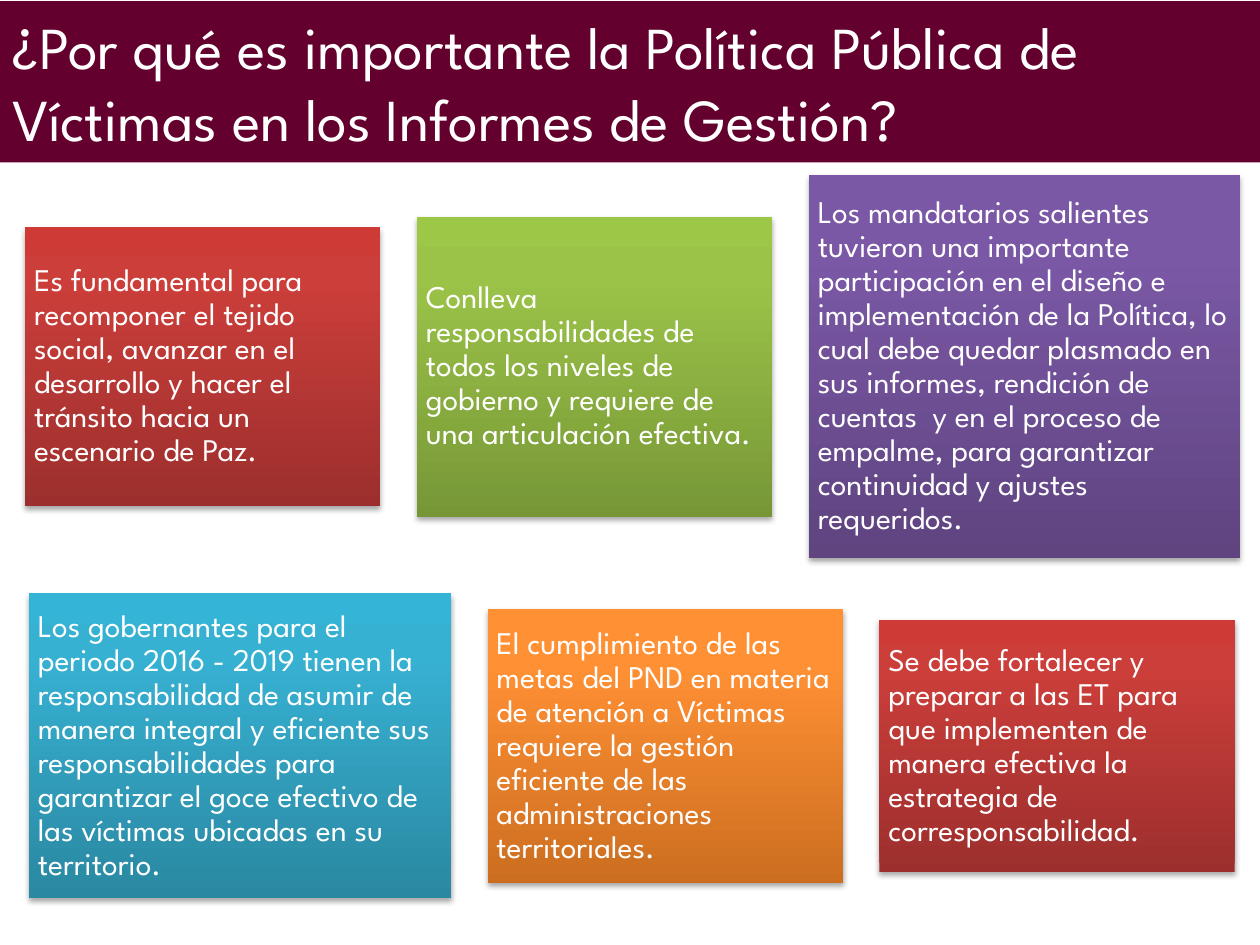
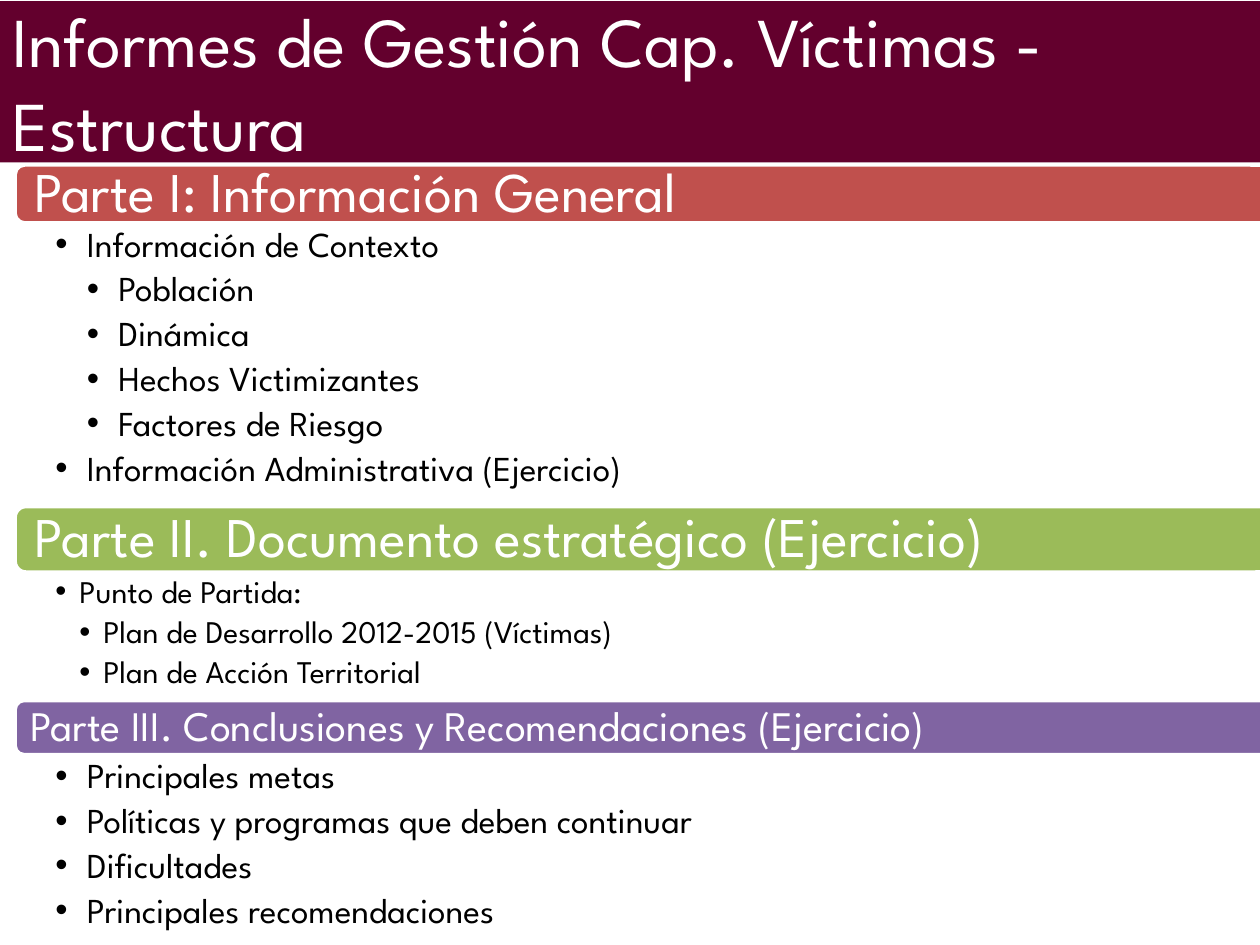
from dataclasses import dataclass

import pptx
import pptx.dml.color
import pptx.enum.shapes
import pptx.enum.text
import pptx.oxml
import pptx.oxml.ns
import pptx.util
from pptx.util import Inches

FONT = "League Spartan"
WHITE = "FFFFFF"
BLACK = "000000"
BAND = "63002D"
DRAWING = pptx.oxml.ns.nsdecls("a")
MIDDLE = pptx.enum.text.MSO_ANCHOR.MIDDLE
TOP = pptx.enum.text.MSO_ANCHOR.TOP

# Gradient stops from the bottom edge to the top edge
RED = ("9C2F2D", "CB3E3A", "CE3B37")
GREEN = ("779737", "9BC348", "9DC746")
PURPLE = ("5F4480", "7B58A6", "7C57A8")
BLUE = ("2A88A2", "37B1D2", "34B4D6")
ORANGE = ("CC6E20", "FF9034", "FF9136")


@dataclass
class Card:
    text: str
    stops: tuple[str, str, str]
    width: float
    height: float


@dataclass
class CardRow:
    left: float
    middle: float
    cards: list[Card]


@dataclass
class Section:
    heading: str
    color: str
    bar_height: float
    heading_size: int
    heading_inset: float
    list_height: float
    list_size: int
    indent: float
    items: list[tuple[int, str]]  # level, text


CARD_GAP = 0.29
CARD_ROWS = [
    CardRow(0.2, 2.91, [
        Card("Es fundamental para recomponer el tejido social, avanzar en el desarrollo "
             "y hacer el tránsito hacia un escenario de Paz.", RED, 2.82, 2.21),
        Card("Conlleva responsabilidades de todos los niveles de gobierno y requiere de "
             "una articulación efectiva.", GREEN, 2.82, 2.38),
        Card("Los mandatarios salientes tuvieron una importante participación en el diseño "
             "e implementación de la Política, lo cual debe quedar plasmado en sus informes, "
             "rendición de cuentas  y en el proceso de empalme, para garantizar continuidad "
             "y ajustes requeridos.", PURPLE, 3.42, 3.04),
    ]),
    CardRow(0.23, 5.92, [
        Card("Los gobernantes para el periodo 2016 - 2019 tienen la responsabilidad de asumir "
             "de manera integral y eficiente sus responsabilidades para garantizar el goce "
             "efectivo de las víctimas ubicadas en su territorio.", BLUE, 3.35, 2.42),
        Card("El cumplimiento de las metas del PND en materia de atención a Víctimas requiere "
             "la gestión eficiente de las administraciones territoriales.", ORANGE, 2.82, 2.17),
        Card("Se debe fortalecer y preparar a las ET para que implementen de manera efectiva "
             "la estrategia de corresponsabilidad.", RED, 2.82, 2),
    ]),
]

SECTIONS_LEFT, SECTIONS_TOP, SECTIONS_WIDTH = 0.12, 1.31, 10.08
SECTIONS = [
    Section("Parte I: Información General", "C0504D", 0.46, 32, 0.13, 2.25, 20, 0.25, [
        (0, "Información de Contexto"),
        (1, "Población"),
        (1, "Dinámica"),
        (1, "Hechos Victimizantes"),
        (1, "Factores de Riesgo"),
        (0, "Información Administrativa (Ejercicio)"),
    ]),
    Section("Parte II. Documento estratégico (Ejercicio)", "9BBB59", 0.52, 32, 0.13,
            1.02, 18, 0.19, [
        (0, "Punto de Partida:"),
        (1, "Plan de Desarrollo 2012-2015 (Víctimas)"),
        (1, "Plan de Acción Territorial"),
    ]),
    Section("Parte III. Conclusiones y Recomendaciones (Ejercicio)", "8064A2", 0.43, 24, 0.1,
            1.5, 20, 0.25, [
        (0, "Principales metas"),
        (0, "Políticas y programas que deben continuar"),
        (0, "Dificultades"),
        (0, "Principales recomendaciones"),
    ]),
]


def rgb(color: str) -> pptx.dml.color.RGBColor:
    return pptx.dml.color.RGBColor.from_string(color)


def place(shape, left: float, top: float, width: float, height: float) -> None:
    shape.left, shape.top = Inches(left), Inches(top)
    shape.width, shape.height = Inches(width), Inches(height)


def format_frame(shape, insets: tuple[float, float, float, float], anchor=MIDDLE):
    """Set insets (left, top, right, bottom) and anchor, and return the text frame."""
    frame = shape.text_frame
    frame.word_wrap = True
    frame.auto_size = pptx.enum.text.MSO_AUTO_SIZE.NONE
    frame.vertical_anchor = anchor
    (frame.margin_left, frame.margin_top,
     frame.margin_right, frame.margin_bottom) = map(Inches, insets)
    return frame


def write(paragraph, text: str, *, size: float, color: str = WHITE,
          line_spacing: float = 0.9, space_after: float = 0) -> None:
    paragraph.alignment = pptx.enum.text.PP_ALIGN.LEFT
    paragraph.line_spacing = line_spacing
    paragraph.space_before = pptx.util.Pt(0)
    paragraph.space_after = pptx.util.Pt(space_after)
    run = paragraph.add_run()
    run.text = text
    run.font.name = FONT
    run.font.size = pptx.util.Pt(size)
    run.font.bold = False
    run.font.color.rgb = rgb(color)


def set_bullet(paragraph, level: int, indent: float) -> None:
    paragraph.level = level
    properties = paragraph._p.get_or_add_pPr()
    properties.set("marL", str(Inches(indent * (level + 1))))
    properties.set("indent", str(-Inches(indent)))
    properties.append(pptx.oxml.parse_xml(f'<a:buFont {DRAWING} typeface="Arial"/>'))
    properties.append(pptx.oxml.parse_xml(f'<a:buChar {DRAWING} char="•"/>'))


def add_title(slide, text: str, size: float) -> None:
    title = slide.shapes.title
    place(title, 0, 0.01, 10, 1.28)
    title.fill.solid()
    title.fill.fore_color.rgb = rgb(BAND)
    frame = format_frame(title, (0.1, 0.05, 0.1, 0.05))
    write(frame.paragraphs[0], text, size=size, line_spacing=1.0)


def add_card(slide, card: Card, left: float, middle: float) -> None:
    shape = slide.shapes.add_shape(
        pptx.enum.shapes.MSO_SHAPE.RECTANGLE, Inches(left), Inches(middle - card.height / 2),
        Inches(card.width), Inches(card.height))
    shape.line.fill.background()

    # Three-stop gradient and soft shadow
    shape.fill.gradient()
    shape.fill.gradient_angle = 90
    stops = shape._element.spPr.find(".//" + pptx.oxml.ns.qn("a:gsLst"))
    for stop in list(stops):
        stops.remove(stop)
    for position, color in zip((0, 80, 100), card.stops):
        stops.append(pptx.oxml.parse_xml(
            f'<a:gs {DRAWING} pos="{position * 1000}"><a:srgbClr val="{color}"/></a:gs>'))
    shape._element.spPr.append(pptx.oxml.parse_xml(
        f'<a:effectLst {DRAWING}><a:outerShdw blurRad="40000" dist="23000" dir="5400000" '
        f'rotWithShape="0"><a:srgbClr val="{BLACK}"><a:alpha val="35000"/></a:srgbClr>'
        '</a:outerShdw></a:effectLst>'))

    frame = format_frame(shape, (0.07, 0.07, 0.07, 0.07))
    write(frame.paragraphs[0], card.text, size=18)


def add_section_bar(slide, section: Section, top: float) -> None:
    bar = slide.shapes.add_shape(
        pptx.enum.shapes.MSO_SHAPE.ROUNDED_RECTANGLE, Inches(SECTIONS_LEFT), Inches(top),
        Inches(SECTIONS_WIDTH), Inches(section.bar_height))
    bar.shadow.inherit = False
    bar.fill.solid()
    bar.fill.fore_color.rgb = rgb(section.color)
    bar.line.color.rgb = rgb(WHITE)
    bar.line.width = pptx.util.Pt(2)
    frame = format_frame(bar, (section.heading_inset, 0, section.heading_inset, 0))
    write(frame.paragraphs[0], section.heading, size=section.heading_size)


def fill_section_list(placeholder, section: Section, top: float) -> None:
    place(placeholder, SECTIONS_LEFT, top, SECTIONS_WIDTH, section.list_height)
    frame = format_frame(placeholder, (0.32, 0.03, 0.16, 0.03), TOP)
    for index, (level, text) in enumerate(section.items):
        paragraph = frame.add_paragraph() if index else frame.paragraphs[0]
        set_bullet(paragraph, level, section.indent)
        write(paragraph, text, size=section.list_size, color=BLACK,
              space_after=0.2 * section.list_size)


def build_importance_slide(presentation) -> None:
    slide = presentation.slides.add_slide(presentation.slide_layouts.get_by_name("Title Only"))
    add_title(slide, "¿Por qué es importante la Política Pública de Víctimas "
                     "en los Informes de Gestión?", 34)
    for row in CARD_ROWS:
        left = row.left
        for card in row.cards:
            add_card(slide, card, left, row.middle)
            left += card.width + CARD_GAP


def build_structure_slide(presentation) -> None:
    slide = presentation.slides.add_slide(presentation.slide_layouts.get_by_name("Comparison"))
    add_title(slide, "Informes de Gestión Cap. Víctimas - Estructura", 40)

    # The layout offers four bodies; three hold the lists
    spare, *bodies = list(slide.placeholders)[1:]
    spare._element.getparent().remove(spare._element)

    top = SECTIONS_TOP
    for section, body in zip(SECTIONS, bodies):
        add_section_bar(slide, section, top)
        top += section.bar_height
        fill_section_list(body, section, top)
        top += section.list_height


def main() -> None:
    presentation = pptx.Presentation()
    presentation.slide_width = Inches(10)
    presentation.slide_height = Inches(7.5)
    build_importance_slide(presentation)
    build_structure_slide(presentation)
    presentation.save("out.pptx")


if __name__ == "__main__":
    main()
